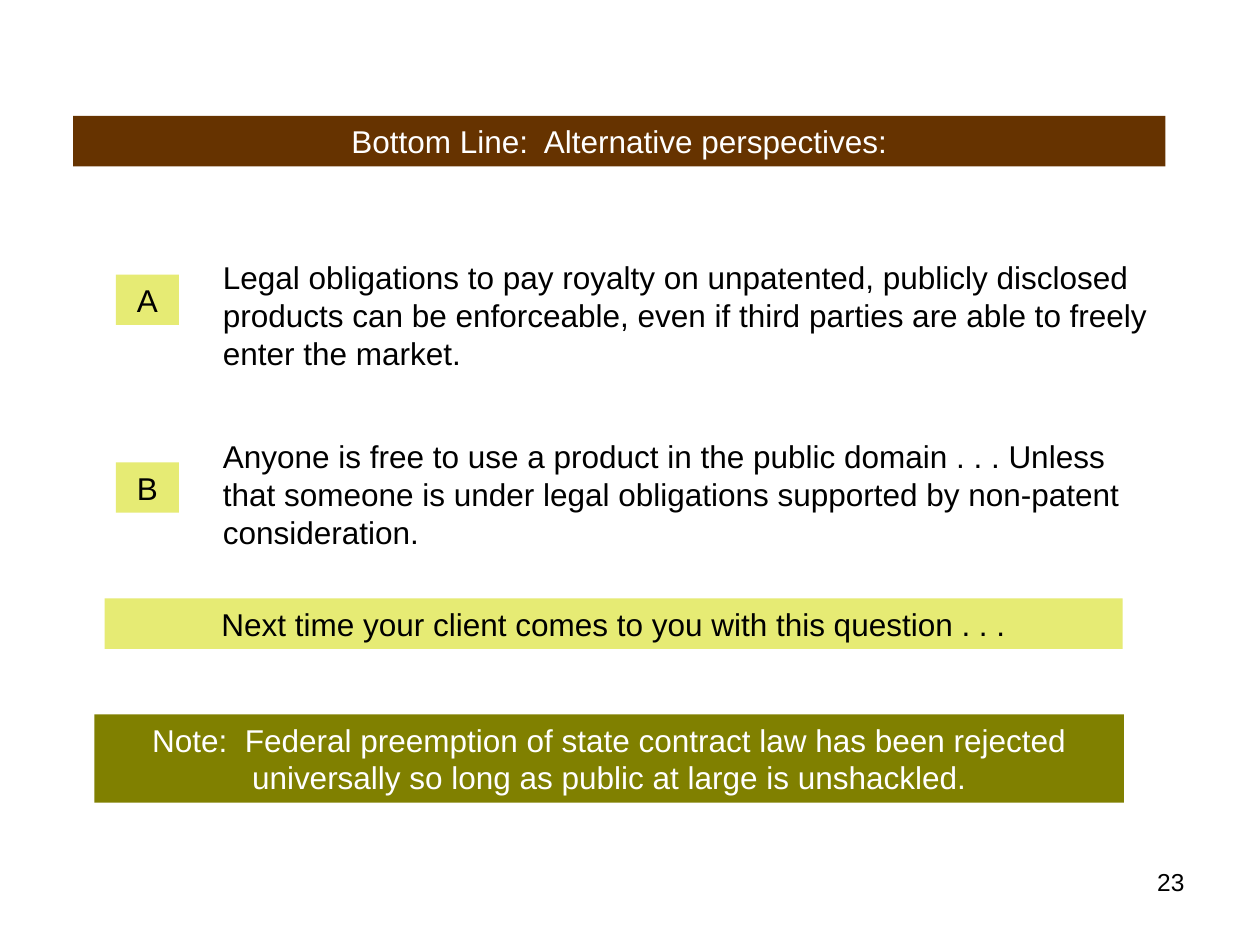
from pptx import Presentation
from pptx.dml.color import RGBColor
from pptx.enum import shapes, text
from pptx.util import Inches, Pt

COLORS = {"brown": "663300", "olive": "808000", "lime": "E6EB74",
          "black": "000000", "white": "FFFFFF"}

TITLE = "Bottom Line:  Alternative perspectives:"
TITLE_BOX = (0.58, 0.92, 8.67, 0.4)

# letter, top of its tag, top of its text, text
PERSPECTIVES = [
    ("A", 2.18, 2, "Legal obligations to pay royalty on unpatented, publicly disclosed "
     "products can be enforceable, even if third parties are able to freely enter the market."),
    ("B", 3.67, 3.42, "Anyone is free to use a product in the public domain . . . Unless that "
     "someone is under legal obligations supported by non-patent consideration."),
]

# text, box, fill, font colour
BANNERS = [
    ("Next time your client comes to you with this question . . .",
     (0.83, 4.75, 8.08, 0.4), "lime", "black"),
    ("Note:  Federal preemption of state contract law has been rejected universally "
     "so long as public at large is unshackled.",
     (0.75, 5.67, 8.17, 0.7), "olive", "white"),
]

PAGE_NUMBER = "23"
PAGE_NUMBER_BOX = (7.17, 6.83, 2.33, 0.52)


def rgb(name):
    return RGBColor.from_string(COLORS[name])


def write(shape, content, color="black", align=text.PP_ALIGN.LEFT, size=18):
    frame = shape.text_frame
    frame.text = content
    frame.word_wrap = True
    frame.auto_size = text.MSO_AUTO_SIZE.NONE
    frame.vertical_anchor = text.MSO_ANCHOR.TOP
    paragraph = frame.paragraphs[0]
    paragraph.alignment = align
    paragraph.font.name = "Arial"
    paragraph.font.size = Pt(size)
    paragraph.font.color.rgb = rgb(color)


def fill_solid(shape, color):
    shape.fill.solid()
    shape.fill.fore_color.rgb = rgb(color)


def add_banner(slide, content, box, fill, color):
    shape = slide.shapes.add_shape(shapes.MSO_SHAPE.RECTANGLE, *map(Inches, box))
    shape.shadow.inherit = False
    shape.line.fill.background()
    fill_solid(shape, fill)
    write(shape, content, color, text.PP_ALIGN.CENTER)


def add_text(slide, content, box, **style):
    write(slide.shapes.add_textbox(*map(Inches, box)), content, **style)


def main():
    presentation = Presentation()
    presentation.slide_width, presentation.slide_height = Inches(10), Inches(7.5)
    slide = presentation.slides.add_slide(presentation.slide_layouts[5])

    title = slide.shapes.title
    title.left, title.top, title.width, title.height = map(Inches, TITLE_BOX)
    fill_solid(title, "brown")
    write(title, TITLE, "white", text.PP_ALIGN.CENTER)

    for letter, tag_top, text_top, content in PERSPECTIVES:
        add_banner(slide, letter, (0.92, tag_top, 0.5, 0.4), "lime", "black")
        add_text(slide, content, (1.67, text_top, 7.58, 1))
    for banner in BANNERS:
        add_banner(slide, *banner)
    add_text(slide, PAGE_NUMBER, PAGE_NUMBER_BOX, align=text.PP_ALIGN.RIGHT, size=14)

    presentation.save("out.pptx")


if __name__ == "__main__":
    main()
